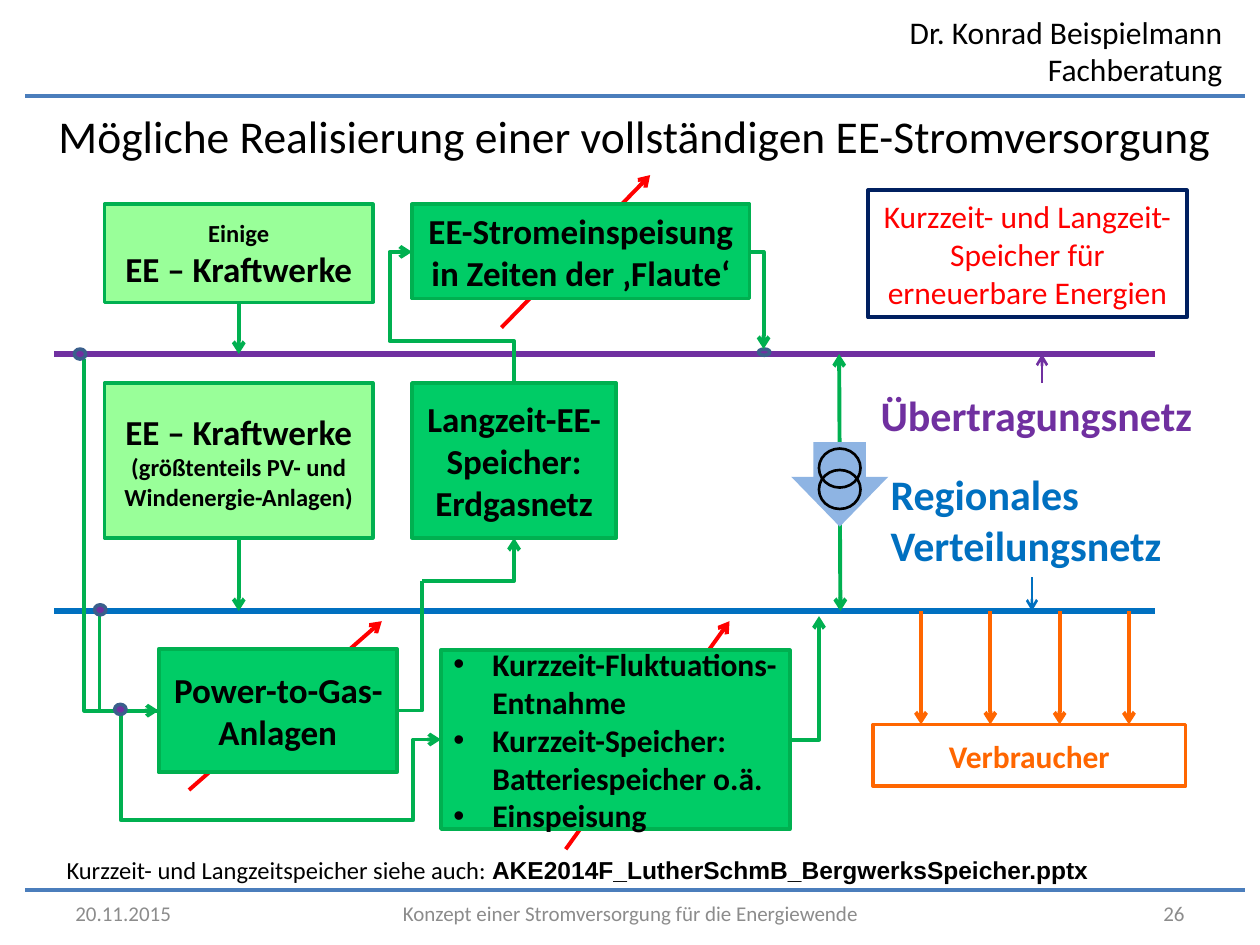
from dataclasses import dataclass

from lxml import etree
from pptx import Presentation
from pptx.dml.color import RGBColor
from pptx.enum import shapes as es, text as et
from pptx.oxml.ns import qn
from pptx.util import Inches, Pt

LEFT, CENTER, RIGHT = et.PP_ALIGN.LEFT, et.PP_ALIGN.CENTER, et.PP_ALIGN.RIGHT
TOP, MIDDLE = et.MSO_ANCHOR.TOP, et.MSO_ANCHOR.MIDDLE
RECT, OVAL = es.MSO_SHAPE.RECTANGLE, es.MSO_SHAPE.OVAL


@dataclass(frozen=True)
class Theme:
    font: str = "Calibri"
    black: str = "000000"
    grey: str = "8C8C8C"
    rule: str = "4B7EBC"
    red: str = "FF0000"
    navy: str = "002060"
    purple: str = "7030A0"
    blue: str = "0070C0"
    orange: str = "FF6600"
    green: str = "00B050"
    plant: str = "99FF99"
    storage: str = "00CC66"
    dot_edge: str = "3A5F8C"
    transformer: str = "8EB4E3"
    title: int = 26
    grid: int = 24
    box: int = 20
    text: int = 18
    small: int = 14
    footer: int = 12


@dataclass(frozen=True)
class Box:
    x: float
    y: float
    w: float
    h: float

    def sub(self, dx, dy, w, h):
        return Box(self.x + dx, self.y + dy, w, h)

    def pt(self, dx, dy):
        return self.x + dx, self.y + dy

    def emu(self):
        return [Inches(v) for v in (self.x, self.y, self.w, self.h)]


T = Theme()


def write(frame, *paragraphs, size=T.text, color=T.black, bold=False, align=LEFT,
          anchor=TOP, bullet=False):
    """Each paragraph is a string or a list of (text, overrides); a newline is a line break."""
    frame.word_wrap, frame.vertical_anchor = True, anchor
    for i, content in enumerate(paragraphs):
        par = frame.paragraphs[0] if i == 0 else frame.add_paragraph()
        par.alignment = align
        for words, over in [(content, {})] if isinstance(content, str) else content:
            for n, line in enumerate(words.split("\n")):
                if n:
                    par.add_line_break()
                if not line:
                    continue
                run = par.add_run()
                run.text = line
                run.font.name = over.get("font", T.font)
                run.font.size = Pt(over.get("size", size))
                run.font.bold = over.get("bold", bold)
                run.font.color.rgb = RGBColor.from_string(color)
        if bullet:
            props = par._p.get_or_add_pPr()
            props.set("marL", str(Inches(0.31)))
            props.set("indent", str(-Inches(0.31)))
            etree.SubElement(props, qn("a:buFont")).set("typeface", "Arial")
            etree.SubElement(props, qn("a:buChar")).set("char", "•")


def label(shapes, box, *paragraphs, **fmt):
    area = shapes.add_textbox(*box.emu())
    write(area.text_frame, *paragraphs, **fmt)
    return area


def block(shapes, box, *paragraphs, kind=RECT, fill=None, line=None, width=2, **fmt):
    shape = shapes.add_shape(kind, *box.emu())
    shape.shadow.inherit = False
    if fill:
        shape.fill.solid()
        shape.fill.fore_color.rgb = RGBColor.from_string(fill)
    else:
        shape.fill.background()
    if line:
        shape.line.color.rgb = RGBColor.from_string(line)
        shape.line.width = Pt(width)
    else:
        shape.line.fill.background()
    write(shape.text_frame, *paragraphs, **{"align": CENTER, "anchor": MIDDLE, **fmt})
    return shape


def connect(shapes, start, end, color, width=2.25, head=False, tail=False,
            kind=es.MSO_CONNECTOR.STRAIGHT):
    link = shapes.add_connector(kind, *[Inches(v) for v in (*start, *end)])
    link.line.color.rgb = RGBColor.from_string(color)
    link.line.width = Pt(width)
    for tag, wanted in (("a:headEnd", head), ("a:tailEnd", tail)):
        if wanted:
            etree.SubElement(link.line._ln, qn(tag)).set("type", "arrow")
    etree.SubElement(link._element.spPr, qn("a:effectLst"))
    return link


def elbow(shapes, start, end, preset, upright=False, adjust=(), tail=True):
    """Bent connector; an upright one leaves its start vertically."""
    (x1, y1), (x2, y2) = start, end
    if upright:  # lay the connector out before a turn by 270 degrees about its centre
        cx, cy, dx, dy = (x1 + x2) / 2, (y1 + y2) / 2, (x2 - x1) / 2, (y2 - y1) / 2
        start, end = (cx + dy, cy - dx), (cx - dy, cy + dx)
    link = connect(shapes, start, end, T.green, tail=tail, kind=es.MSO_CONNECTOR.ELBOW)
    props = link._element.spPr
    if upright:
        props.find(qn("a:xfrm")).set("rot", str(270 * 60000))
    geometry = props.find(qn("a:prstGeom"))
    geometry.set("prst", preset)
    for i, value in enumerate(adjust, 1):
        guide = etree.SubElement(geometry.find(qn("a:avLst")), qn("a:gd"))
        guide.set("name", f"adj{i}")
        guide.set("fmla", f"val {round(value * 100000)}")


def node(shapes, box, height=0.08):
    block(shapes, box.sub(0, 0, 0.09, height), kind=OVAL, fill=T.purple, line=T.dot_edge)


def page_frame(slide, box):
    shapes = slide.shapes
    label(shapes, box.sub(6.73, 0.05, 3.07, 0.71),
          "Dr. Konrad Beispielmann\nFachberatung", align=RIGHT)
    for y in (0.76, 7.06):
        connect(shapes, box.pt(9.88, y), box.pt(0.2, y), T.rule)
    for x, width, words, align in (
            (0.5, 2.06, "20.11.2015", LEFT), (7.44, 2.06, "26", RIGHT),
            (2.72, 4.57, "Konzept einer Stromversorgung für die Energiewende", CENTER)):
        label(shapes, box.sub(x, 7.05, width, 0.4), words, size=T.footer, color=T.grey,
              align=align, anchor=MIDDLE)
    title = shapes.title
    title.left, title.top, title.width, title.height = box.sub(0.35, 0.76, 9.38, 0.63).emu()
    write(title.text_frame, "Mögliche Realisierung einer vollständigen EE-Stromversorgung",
          size=T.title, align=CENTER, anchor=MIDDLE)
    title.text_frame.auto_size = et.MSO_AUTO_SIZE.NONE


def grid(shapes, bus, name_box, name, color, side):
    """Grid line with its name; side is the edge of the name that points at the line."""
    connect(shapes, bus.pt(0, 0), bus.pt(bus.w, bus.h), color, width=3)
    area = label(shapes, name_box, name, size=T.grid, color=color, bold=True)
    middle = name_box.x + name_box.w / 2
    arrow = connect(shapes, (middle, name_box.y), (middle, bus.y), color, 1.5, tail=True)
    arrow.begin_connect(area, side)


def power_plant(shapes, box, bus_y, *paragraphs):
    plant = block(shapes, box, *paragraphs, fill=T.plant, line=T.green, size=T.box, bold=True)
    middle = box.x + box.w / 2
    feed = connect(shapes, (middle, box.y + box.h), (middle, bus_y), T.green, tail=True)
    feed.begin_connect(plant, 2)


def consumers(shapes, box):
    for i in range(4):
        x = 0.38 + i * 0.55
        connect(shapes, box.pt(x, 0), box.pt(x, 0.9), T.orange, tail=True)
    block(shapes, box.sub(0, 0.9, box.w, 0.49), "Verbraucher", line=T.orange,
          color=T.orange, bold=True)


def transformer(shapes, box):
    connect(shapes, box.pt(0.39, box.h), box.pt(0.38, 0), T.green, head=True, tail=True)
    arrow = block(shapes, box.sub(0, 0.7, box.w, 0.67), kind=es.MSO_SHAPE.DOWN_ARROW,
                  fill=T.transformer)
    arrow.adjustments[0], arrow.adjustments[1] = 0.54, 0.59
    for y in (0.75, 0.92):
        block(shapes, box.sub(0.22, y, 0.33, 0.31), kind=OVAL, line=T.black, width=1.5)


def storage(shapes, box, *paragraphs, control=None, **fmt):
    """Storage box, crossed behind by a red control arrow if one is given."""
    if control:
        connect(shapes, *control, T.red, tail=True)
    block(shapes, box, *paragraphs, fill=T.storage, line=T.green,
          **{"size": T.box, "bold": True, **fmt})


def long_term_storage(shapes, box):
    storage(shapes, box.sub(0.67, 3.76, 1.89, 0.98), "Power-to-Gas-Anlagen", width=2.25,
            control=(box.pt(0.91, 4.88), box.pt(2.44, 3.54)))
    storage(shapes, box.sub(2.68, 1.65, 1.62, 1.23), "Langzeit-EE-Speicher: Erdgasnetz")
    storage(shapes, box.sub(2.68, 0.23, 2.68, 0.75),
            "EE-Stromeinspeisung in Zeiten der ‚Flaute‘",
            control=(box.pt(3.39, 1.21), box.pt(4.57, 0)))
    gas_inlet = box.pt(0.67, 4.25)
    elbow(shapes, box.pt(0.2, 3.5), gas_inlet, "bentConnector2", upright=True)
    elbow(shapes, box.pt(0.08, 1.46), gas_inlet, "bentConnector2", upright=True, tail=False)
    elbow(shapes, box.pt(2.56, 4.25), box.pt(2.76, 3.22), "bentConnector2", tail=False)
    elbow(shapes, box.pt(2.76, 3.22), box.pt(3.49, 2.88), "bentConnector2")
    elbow(shapes, box.pt(3.49, 1.65), box.pt(2.68, 0.61), "bentConnector4", upright=True,
          adjust=(0.32, 1.22))
    node(shapes, box.sub(5.43, 1.38, 0, 0), height=0.05)
    elbow(shapes, box.pt(5.35, 0.61), box.pt(5.47, 1.38), "bentConnector2")
    for x, y in ((0, 1.38), (0.16, 3.41)):
        node(shapes, box.sub(x, y, 0, 0))


def short_term_storage(shapes, box):
    storage(shapes, box.sub(2.59, 0.23, 2.77, 1.42), "Kurzzeit-Fluktuations-Entnahme",
            "Kurzzeit-Speicher: Batteriespeicher o.ä.", "Einspeisung", size=T.text,
            align=LEFT, bullet=True, control=(box.pt(3.58, 1.81), box.pt(4.88, 0)))
    elbow(shapes, box.pt(0.05, 0.74), box.pt(1.29, 1.58), "bentConnector2", upright=True,
          tail=False)
    elbow(shapes, box.pt(1.29, 1.58), box.pt(2.59, 0.94), "bentConnector3", adjust=(0.83,))
    elbow(shapes, box.pt(5.37, 0.94), box.pt(5.59, -0.04), "bentConnector2")
    node(shapes, box.sub(0, 0.66, 0, 0))


def notes(shapes, box):
    block(shapes, box.sub(6.46, 0, 2.53, 1.01),
          "Kurzzeit- und Langzeit-Speicher für\nerneuerbare Energien",
          line=T.navy, width=2.25, color=T.red)
    label(shapes, box.sub(0, 5.23, 9.07, 0.34),
          [("Kurzzeit- und Langzeitspeicher siehe auch: ", {}),
           ("AKE2014F_LutherSchmB_BergwerksSpeicher.pptx", {"font": "Arial", "bold": True})],
          size=T.small)


def main():
    prs = Presentation()
    prs.slide_width, prs.slide_height = Inches(10), Inches(7.5)
    slide = prs.slides.add_slide(prs.slide_layouts[5])
    shapes = slide.shapes
    transmission_y, regional_y = 2.81, 4.85
    page_frame(slide, Box(0, 0, 10, 7.5))
    grid(shapes, Box(0.43, transmission_y, 8.74, 0), Box(6.89, 3.04, 2.76, 0.5),
         "Übertragungsnetz", T.purple, 0)
    grid(shapes, Box(0.43, regional_y, 8.74, 0), Box(6.97, 3.67, 2.44, 0.91),
         "Regionales Verteilungsnetz", T.blue, 2)
    power_plant(shapes, Box(0.83, 1.62, 2.13, 0.78), transmission_y,
                [("Einige", {"size": T.small})], "EE – Kraftwerke")
    power_plant(shapes, Box(0.83, 3.04, 2.13, 1.23), regional_y,
                [("EE – Kraftwerke", {}),
                 ("\n(größtenteils PV- und\nWindenergie-Anlagen)", {"size": T.small})])
    consumers(shapes, Box(6.93, regional_y, 2.48, 1.39))
    transformer(shapes, Box(6.28, transmission_y, 0.77, regional_y - transmission_y))
    long_term_storage(shapes, Box(0.59, 1.39, 5.52, 4.88))
    short_term_storage(shapes, Box(0.91, 4.93, 5.59, 1.81))
    notes(shapes, Box(0.43, 1.51, 9.07, 5.57))
    prs.save("out.pptx")


if __name__ == "__main__":
    main()
